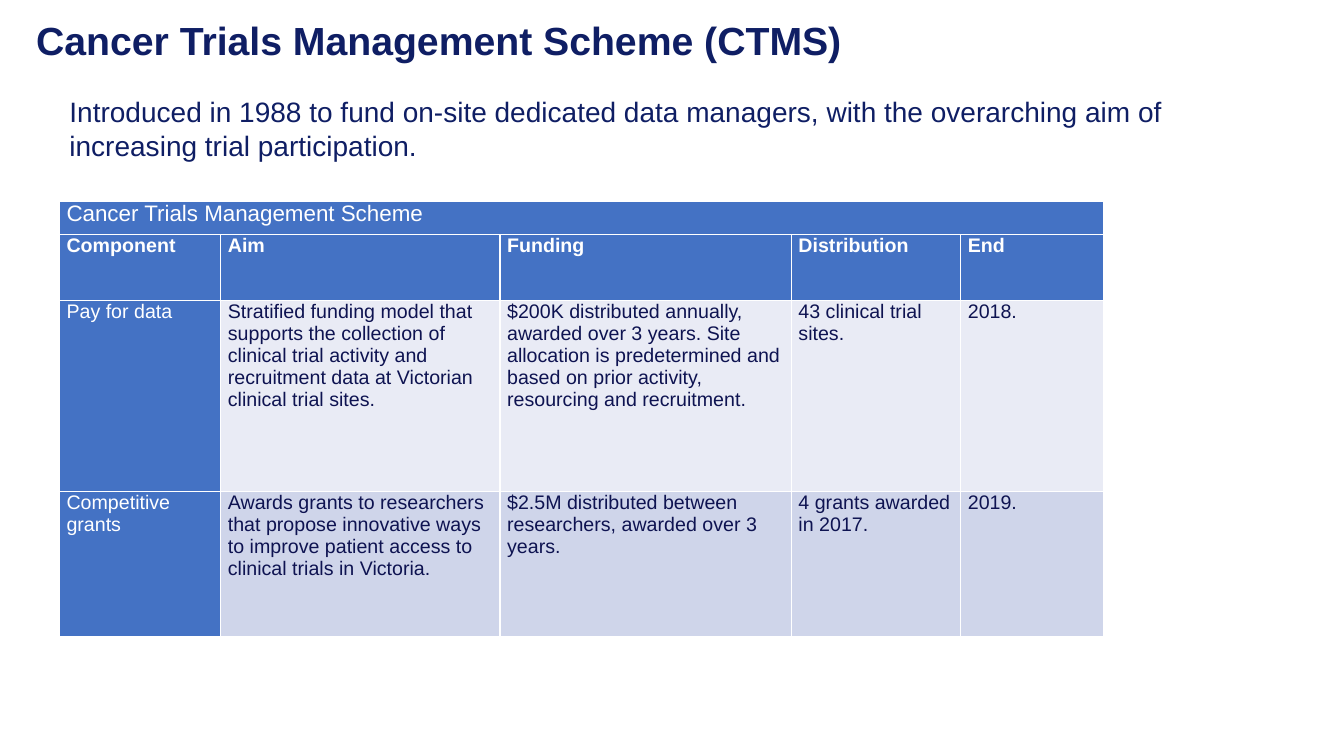
from dataclasses import dataclass

from lxml import etree
from pptx import Presentation
from pptx import util as u
from pptx.dml.color import RGBColor
from pptx.enum import text
from pptx.oxml import ns


@dataclass(frozen=True)
class Theme:
    font: str = "Arial"
    navy: str = "0F1E64"
    ink: str = "0E1351"
    white: str = "FFFFFF"
    blue: str = "4472C4"
    pale: str = "E9EBF5"
    mid: str = "CFD5EA"
    title: int = 28
    intro: int = 20
    head: int = 16
    body: int = 14


@dataclass(frozen=True)
class Label:
    words: str
    box: tuple[int, int, int, int]
    size: int
    bold: bool = False
    lead: float = 1.0
    grow: bool = False


@dataclass(frozen=True)
class Row:
    high: int
    words: tuple[str, ...]
    fill: str
    color: str
    size: int
    bold: bool = False


T = Theme()
WIDE, HIGH = 1333, 750
LEFT, TOP = 59, 200
COLS = (160, 277, 289, 168, 142)

LABELS = (
    Label("Cancer Trials Management Scheme (CTMS)", (26, 17, 1228, 145),
          T.title, bold=True, lead=0.9),
    Label("Introduced in 1988 to fund on-site dedicated data managers, "
          "with the overarching aim of increasing trial participation.",
          (59, 89, 1215, 77), T.intro, grow=True),
)

ROWS = (
    Row(33, ("Cancer Trials Management Scheme",), T.blue, T.white, T.head),
    Row(65, ("Component", "Aim", "Funding", "Distribution", "End"),
        T.blue, T.white, T.body, bold=True),
    Row(190, (
        "Pay for data",
        "Stratified funding model that supports the collection of clinical trial "
        "activity and recruitment data at Victorian clinical trial sites.",
        "$200K distributed annually, awarded over 3 years. Site allocation is "
        "predetermined and based on prior activity, resourcing and recruitment.",
        "43 clinical trial sites.",
        "2018.",
    ), T.pale, T.ink, T.body),
    Row(144, (
        "Competitive grants",
        "Awards grants to researchers that propose innovative ways to improve "
        "patient access to clinical trials in Victoria.",
        "$2.5M distributed between researchers, awarded over 3 years.",
        "4 grants awarded in 2017.",
        "2019.",
    ), T.mid, T.ink, T.body),
)


def px(n: int) -> int:
    """Turn px, at 100 to the inch, into EMU."""
    return u.Emu(n * 9144)


def style(para, size: int, color: str, bold: bool) -> None:
    for run in para.runs:
        run.font.name = T.font
        run.font.size = u.Pt(size)
        run.font.bold = bold
        run.font.color.rgb = RGBColor.from_string(color)


def add_label(slide, label: Label) -> None:
    frame = slide.shapes.add_textbox(*map(px, label.box)).text_frame
    frame.word_wrap = True
    if label.grow:
        frame.auto_size = text.MSO_AUTO_SIZE.SHAPE_TO_FIT_TEXT
    frame.text = label.words
    para = frame.paragraphs[0]
    para.line_spacing = label.lead
    style(para, label.size, T.navy, label.bold)


def add_edges(cell) -> None:
    props = cell._tc.get_or_add_tcPr()
    for side in ("a:lnL", "a:lnR", "a:lnT", "a:lnB"):
        line = etree.SubElement(props, ns.qn(side), w=str(u.Pt(1)))
        fill = etree.SubElement(line, ns.qn("a:solidFill"))
        etree.SubElement(fill, ns.qn("a:srgbClr"), val=T.white)


def fill_cell(cell, words: str, row: Row, first: bool) -> None:
    cell.margin_left = cell.margin_right = px(7)
    cell.margin_top = cell.margin_bottom = 0
    add_edges(cell)
    cell.fill.solid()
    cell.fill.fore_color.rgb = RGBColor.from_string(T.blue if first else row.fill)
    if words:
        cell.text_frame.text = words
        para = cell.text_frame.paragraphs[0]
        para.space_after = u.Pt(7)
        style(para, row.size, T.white if first else row.color, row.bold)


def add_grid(slide) -> None:
    high = sum(row.high for row in ROWS)
    box = map(px, (LEFT, TOP, sum(COLS), high))
    grid = slide.shapes.add_table(len(ROWS), len(COLS), *box).table
    grid.horz_banding = False
    for col, wide in zip(grid.columns, COLS):
        col.width = px(wide)
    for r, row in enumerate(ROWS):
        grid.rows[r].height = px(row.high)
        for c in range(len(COLS)):
            words = row.words[c] if c < len(row.words) else ""
            fill_cell(grid.cell(r, c), words, row, c == 0)
    grid.cell(0, 0).merge(grid.cell(0, len(COLS) - 1))


def main() -> None:
    deck = Presentation()
    deck.slide_width, deck.slide_height = px(WIDE), px(HIGH)
    slide = deck.slides.add_slide(deck.slide_layouts[6])
    # Title and introduction
    for label in LABELS:
        add_label(slide, label)
    # Scheme table
    add_grid(slide)
    deck.save("out.pptx")


if __name__ == "__main__":
    main()
